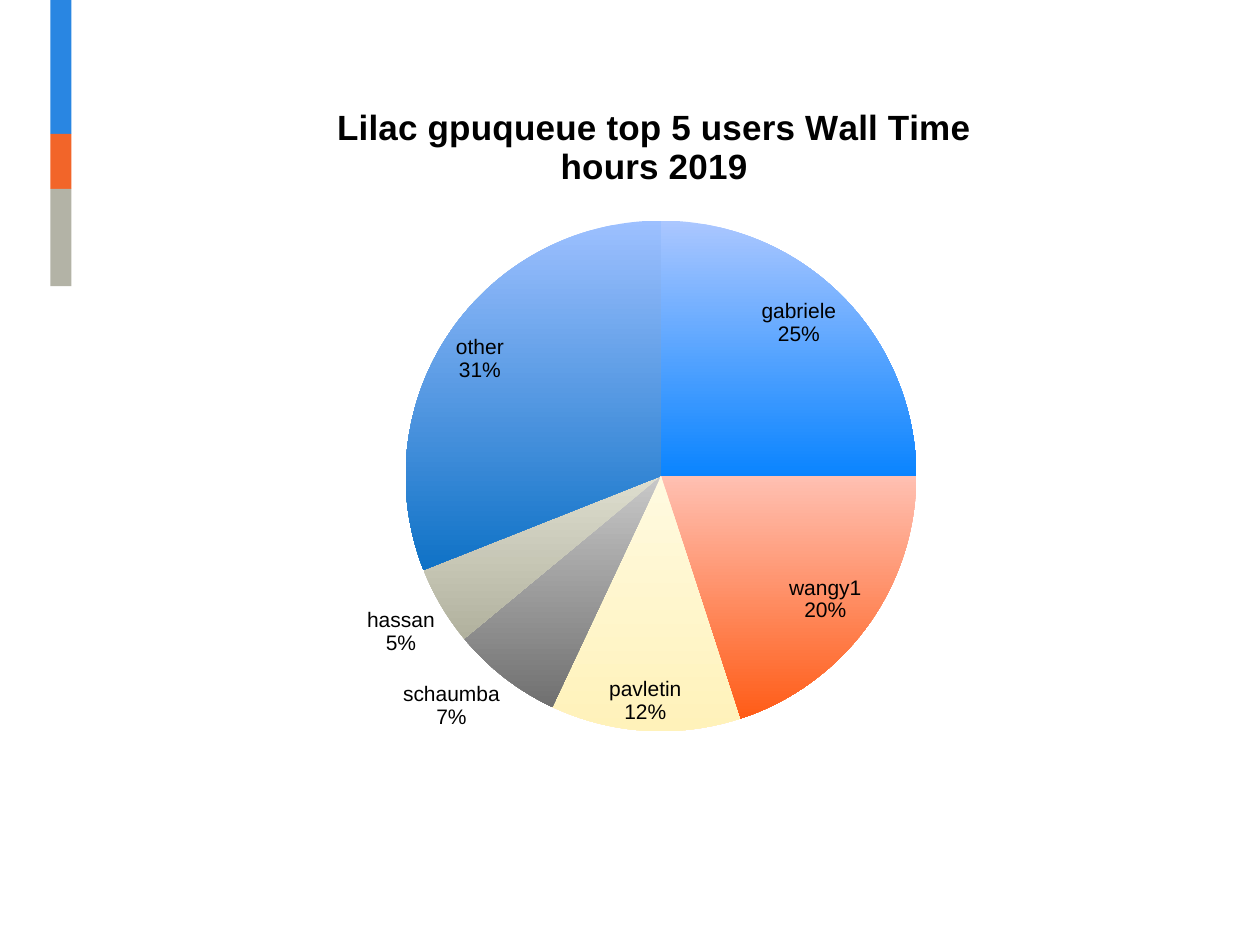
from lxml import etree
from pptx import Presentation
from pptx.chart.data import CategoryChartData
from pptx.dml.color import RGBColor
from pptx.enum import chart as charts, shapes
from pptx.oxml import ns
from pptx.util import Pt

COLORS = {"blue": "2986E2", "orange": "F26529", "stone": "B3B3A6", "text": "000000"}
TITLE = "Lilac gpuqueue top 5 users Wall Time hours 2019"

# user, share in percent, gradient top, gradient bottom, label position
INSIDE = charts.XL_LABEL_POSITION.INSIDE_END
OUTSIDE = charts.XL_LABEL_POSITION.OUTSIDE_END
USERS = [
    ("gabriele", 25, "ABC7FF", "0A84FF", INSIDE),
    ("wangy1", 20, "FFC0B2", "FF5C17", INSIDE),
    ("pavletin", 12, "FFFAE0", "FFF2BA", INSIDE),
    ("schaumba", 7, "C8C8C8", "707070", OUTSIDE),
    ("hassan", 5, "DEDECF", "B1B19E", OUTSIDE),
    ("other", 31, "9DC0FF", "0F72C6", INSIDE),
]


def set_layout(parent, index, **values):
    """Place a chart part by fractions of the chart area."""
    for old in parent.findall(ns.qn("c:layout")):
        parent.remove(old)
    layout = etree.Element(ns.qn("c:layout"))
    manual = etree.SubElement(layout, ns.qn("c:manualLayout"))
    if "w" in values:
        etree.SubElement(manual, ns.qn("c:layoutTarget"), val="inner")
    for name in ("xMode", "yMode"):
        etree.SubElement(manual, ns.qn("c:" + name), val="edge")
    for name, value in values.items():
        etree.SubElement(manual, ns.qn("c:" + name), val=str(value))
    parent.insert(index, layout)


presentation = Presentation()
presentation.slide_width, presentation.slide_height = Pt(720), Pt(540)
slide = presentation.slides.add_slide(presentation.slide_layouts[6])

# Stacked colour bar at the top left
top = 0
for color, height in (("blue", 76.5), ("orange", 31.5), ("stone", 55.5)):
    bar = slide.shapes.add_shape(
        shapes.MSO_SHAPE.RECTANGLE, Pt(28.8), Pt(top), Pt(12), Pt(height))
    bar.shadow.inherit = False
    bar.fill.solid()
    bar.fill.fore_color.rgb = RGBColor.from_string(COLORS[color])
    bar.line.fill.background()
    top += height

# Pie chart
data = CategoryChartData(number_format="#,##0")
data.categories = [user[0] for user in USERS]
data.add_series(TITLE, [user[1] for user in USERS])
chart = slide.shapes.add_chart(
    charts.XL_CHART_TYPE.PIE, Pt(100), Pt(48), Pt(524), Pt(411), data).chart
chart.has_legend = False
chart.font.name = "Arial"
chart.font.size = Pt(12)
chart.font.color.rgb = RGBColor.from_string(COLORS["text"])
plot = chart.plots[0]
plot.vary_by_categories = True
plot_area = chart.element.find(".//" + ns.qn("c:plotArea"))
set_layout(plot_area, 0, x=0.25, y=0.19, w=0.56, h=0.71)

# Chart title
chart.has_title = True
title = chart.chart_title
title.text_frame.text = TITLE
title_font = title.text_frame.paragraphs[0].font
title_font.name = "Arial"
title_font.size = Pt(20)
title_font.bold = True
title_font.color.rgb = RGBColor.from_string(COLORS["text"])
set_layout(title.element if hasattr(title, "element") else
           chart.element.find(".//" + ns.qn("c:title")), 1, x=0.17, y=0.02)

# Slices with vertical gradients, and their labels
series = plot.series[0]
labels = series.data_labels
labels.show_value = False
labels.show_category_name = True
labels.show_percentage = True
labels.position = INSIDE
for index, (_, _, light, dark, position) in enumerate(USERS):
    point = series.points[index]
    fill = point.format.fill
    fill.gradient()
    fill.gradient_angle = 270
    for stop, color in zip(fill.gradient_stops, (light, dark)):
        stop.color.rgb = RGBColor.from_string(color)
    point.format.line.fill.background()
    point.data_label.position = position

# Every label shows the user above the percentage
shown = {"showVal": "0", "showCatName": "1", "showPercent": "1"}
series_labels = chart.element.find(".//" + ns.qn("c:dLbls"))
for label in [series_labels] + series_labels.findall(ns.qn("c:dLbl")):
    for name, value in shown.items():
        label.find(ns.qn("c:" + name)).set("val", value)
    last_flag = (label.find(ns.qn("c:showBubbleSize")))
    if last_flag is None:
        last_flag = label.find(ns.qn("c:showPercent"))
    separator = etree.Element(ns.qn("c:separator"))
    separator.text = "\n"
    last_flag.addnext(separator)

presentation.save("out.pptx")
